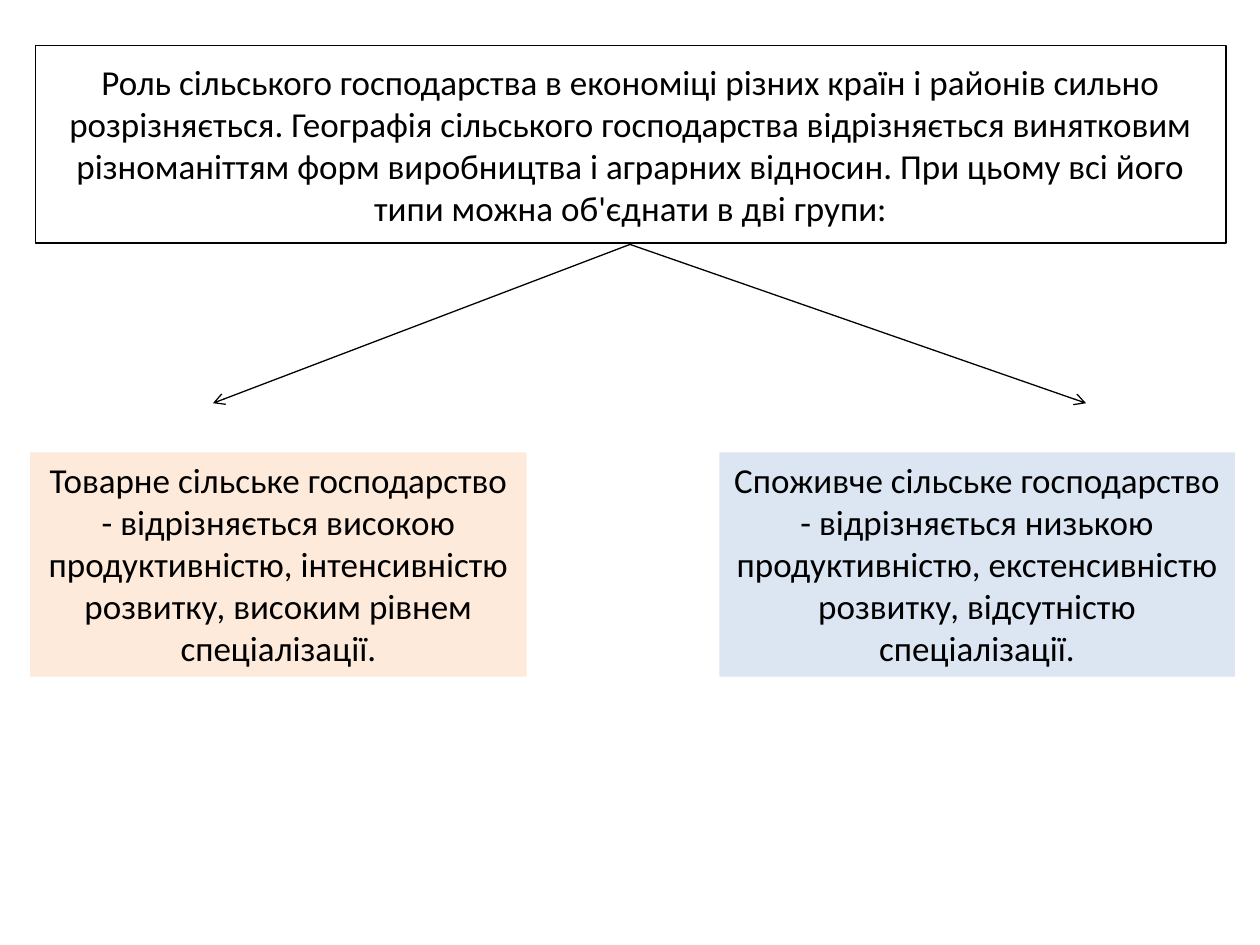
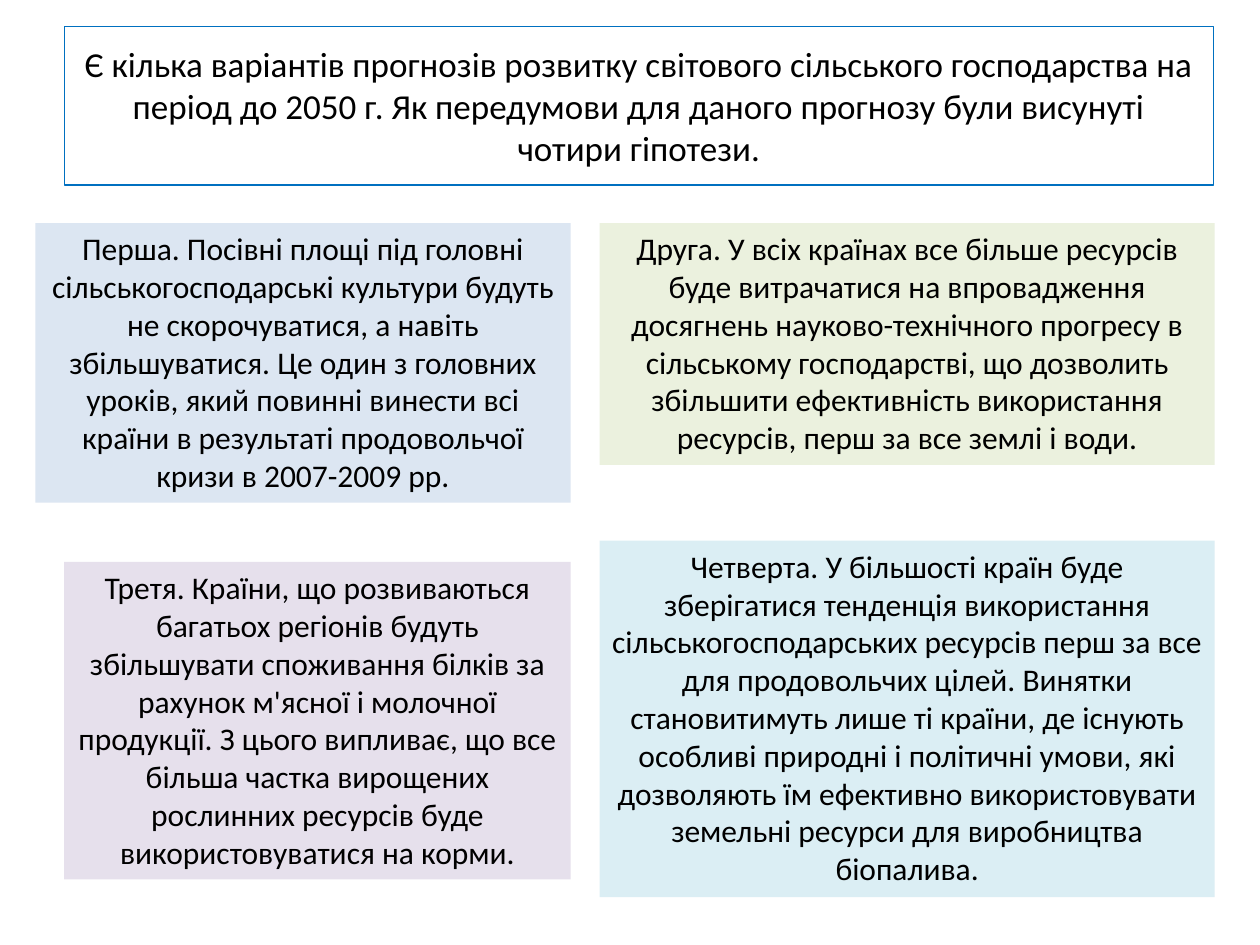
from lxml import etree
from pptx import Presentation
from pptx.dml.color import RGBColor
from pptx.enum.shapes import MSO_CONNECTOR
from pptx.enum.text import MSO_ANCHOR, MSO_AUTO_SIZE, PP_ALIGN
from pptx.oxml.ns import qn
from pptx.util import Inches, Pt

STRAIGHT = MSO_CONNECTOR.STRAIGHT
CENTER = PP_ALIGN.CENTER
TOP, MIDDLE = MSO_ANCHOR.TOP, MSO_ANCHOR.MIDDLE
FIXED, GROW = MSO_AUTO_SIZE.NONE, MSO_AUTO_SIZE.SHAPE_TO_FIT_TEXT

BLACK = RGBColor(0x00, 0x00, 0x00)
WHITE = RGBColor(0xFF, 0xFF, 0xFF)
BLUE = RGBColor(0x00, 0x70, 0xC0)
PALE_ORANGE = RGBColor(0xFD, 0xEA, 0xDA)
PALE_BLUE = RGBColor(0xDC, 0xE6, 0xF2)
PALE_GREEN = RGBColor(0xEB, 0xF1, 0xDE)
PALE_PURPLE = RGBColor(0xE6, 0xE0, 0xEC)
PALE_AQUA = RGBColor(0xDB, 0xEE, 0xF4)

SLIDE_WIDTH, SLIDE_HEIGHT = Inches(10), Inches(7.5)
COLUMNS, ROWS = 100, 75
LINE_WIDTH = Pt(0.75)
FONT_NAME = "Calibri"
LARGE, MEDIUM = 20, 18

TITLE_FRAME = {"word_wrap": True, "auto_size": FIXED, "vertical_anchor": MIDDLE}
CARD_FRAME = {"word_wrap": True, "auto_size": GROW, "vertical_anchor": TOP}

GROUPS_TITLE = (
    "Роль сільського господарства в економіці різних країн і районів сильно "
    "розрізняється. Географія сільського господарства відрізняється винятковим "
    "різноманіттям форм виробництва і аграрних відносин. При цьому всі його "
    "типи можна об'єднати в дві групи:"
)
GROUPS = [
    ((2.4, 35.9, 39.4, 17.8), PALE_ORANGE,
     "Товарне сільське господарство - відрізняється високою продуктивністю, "
     "інтенсивністю розвитку, високим рівнем спеціалізації."),
    ((57.1, 35.9, 40.9, 17.8), PALE_BLUE,
     "Споживче сільське господарство - відрізняється низькою продуктивністю, "
     "екстенсивністю розвитку, відсутністю спеціалізації."),
]
ARROW_START = (50, 19.4)
ARROW_ENDS = [(16.9, 32), (86.2, 32)]

FORECAST_TITLE = (
    "Є кілька варіантів прогнозів розвитку світового сільського господарства на "
    "період до 2050 г. Як передумови для даного прогнозу були висунуті "
    "чотири гіпотези."
)
HYPOTHESES = [
    ((2.8, 17.7, 42.5, 22.2), PALE_BLUE,
     "Перша. Посівні площі під головні сільськогосподарські культури будуть "
     "не скорочуватися, а навіть збільшуватися. Це один з головних уроків, який "
     "повинні винести всі країни в результаті продовольчої кризи в 2007-2009 рр."),
    ((47.6, 17.7, 48.8, 19.2), PALE_GREEN,
     "Друга. У всіх країнах все більше ресурсів буде витрачатися на впровадження "
     "досягнень науково-технічного прогресу в сільському господарстві, що дозволить "
     "збільшити ефективність використання ресурсів, перш за все землі і води."),
    ((5.1, 44.6, 40.2, 25.2), PALE_PURPLE,
     "Третя. Країни, що розвиваються багатьох регіонів будуть збільшувати "
     "споживання білків за рахунок м'ясної і молочної продукції. З цього випливає, "
     "що все більша частка вирощених рослинних ресурсів буде використовуватися "
     "на корми."),
    ((47.6, 42.9, 48.8, 28.3), PALE_AQUA,
     "Четверта. У більшості країн буде зберігатися тенденція використання "
     "сільськогосподарських ресурсів перш за все для продовольчих цілей. Винятки "
     "становитимуть лише ті країни, де існують особливі природні і політичні умови, "
     "які дозволяють їм ефективно використовувати земельні ресурси для виробництва "
     "біопалива."),
]


def set_all(target, values):
    for name, value in values.items():
        setattr(target, name, value)


def grid_point(column, row):
    return round(SLIDE_WIDTH * column / COLUMNS), round(SLIDE_HEIGHT * row / ROWS)


def add_text(page, area, text, size, frame_format):
    box = page.shapes.add_textbox(*grid_point(*area[:2]), *grid_point(*area[2:]))
    set_all(box.text_frame, frame_format)
    para = box.text_frame.paragraphs[0]
    para.alignment = CENTER
    span = para.add_run()
    span.text = text
    set_all(span.font, {"name": FONT_NAME, "size": Pt(size)})
    span.font.color.rgb = BLACK
    return box


def fill_box(box, color):
    box.fill.solid()
    box.fill.fore_color.rgb = color


def draw_line(line, color):
    line.width = LINE_WIDTH
    line.color.rgb = color


def add_title(page, area, text, line_color):
    box = add_text(page, area, text, LARGE, TITLE_FRAME)
    fill_box(box, WHITE)
    draw_line(box.line, line_color)


def add_cards(page, cards, size):
    for area, color, text in cards:
        fill_box(add_text(page, area, text, size, CARD_FRAME), color)


def add_arrow(page, start, end):
    arrow = page.shapes.add_connector(STRAIGHT, *grid_point(*start), *grid_point(*end))
    draw_line(arrow.line, BLACK)
    etree.SubElement(arrow.line._get_or_add_ln(), qn("a:tailEnd"), type="arrow")
    etree.SubElement(arrow._element.spPr, qn("a:effectLst"))


def add_page(deck):
    return deck.slides.add_slide(deck.slide_layouts[6])


def add_groups_page(deck):
    page = add_page(deck)
    add_title(page, (2.8, 3.6, 94.5, 15.7), GROUPS_TITLE, BLACK)
    for end in ARROW_ENDS:
        add_arrow(page, ARROW_START, end)
    add_cards(page, GROUPS, LARGE)


def add_forecast_page(deck):
    page = add_page(deck)
    add_title(page, (5.1, 2.1, 91.2, 12.6), FORECAST_TITLE, BLUE)
    add_cards(page, HYPOTHESES, MEDIUM)


def main():
    deck = Presentation()
    set_all(deck, {"slide_width": SLIDE_WIDTH, "slide_height": SLIDE_HEIGHT})
    add_groups_page(deck)
    add_forecast_page(deck)
    deck.save("out.pptx")


if __name__ == "__main__":
    main()
